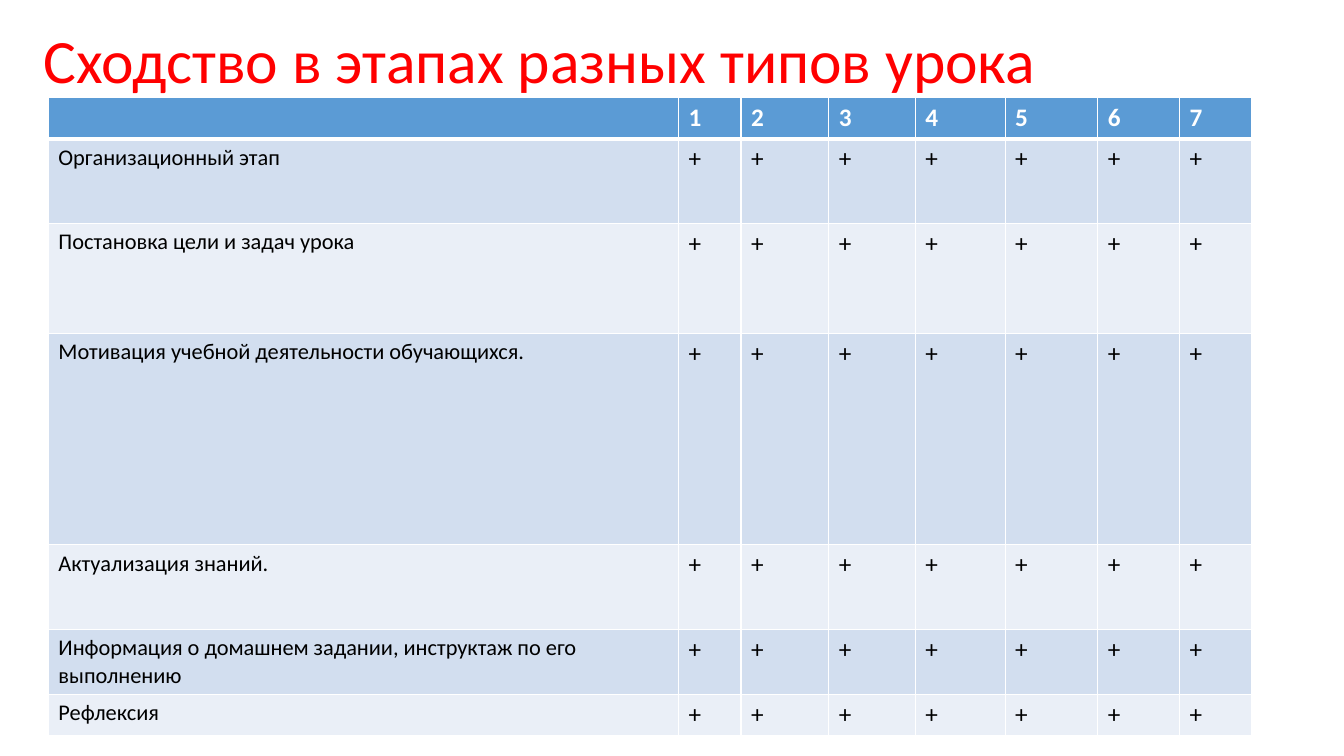
from lxml.etree import SubElement
from pptx import Presentation
from pptx.dml.color import RGBColor
from pptx.enum.text import MSO_ANCHOR, PP_ALIGN
from pptx.oxml.ns import qn
from pptx.util import Inches, Pt

RED = RGBColor(0xFF, 0x00, 0x00)
BLACK = RGBColor(0x00, 0x00, 0x00)
WHITE = RGBColor(0xFF, 0xFF, 0xFF)
HEADER_BLUE = RGBColor(0x5B, 0x9B, 0xD5)
BANDS = (RGBColor(0xD2, 0xDE, 0xEF), RGBColor(0xEA, 0xEF, 0xF7))

LESSON_TYPES = 7
STAGES = [
    "Организационный этап",
    "Постановка цели и задач урока",
    "Мотивация учебной деятельности обучающихся.",
    "Актуализация знаний.",
    "Информация о домашнем задании, инструктаж по его выполнению",
    "Рефлексия",
]
COLUMN_WIDTHS = [6.25, 0.62, 0.87, 0.86, 0.89, 0.92, 0.81, 0.72]
ROW_HEIGHTS = [0.39, 0.84, 1.09, 2.1, 0.84, 0.62, 0.39]


class SlideBuilder:
    """Keeps the text style and the current slide."""

    font = "Calibri"

    def __init__(self, page):
        self.page = page

    def style(self, para, size, color, bold=False):
        for span in para.runs:
            span.font.name = self.font
            span.font.size = Pt(size)
            span.font.bold = bold
            span.font.color.rgb = color

    def title(self, text, left, top, width, height):
        box = self.page.shapes.title
        box.left, box.top = Inches(left), Inches(top)
        box.width, box.height = Inches(width), Inches(height)
        frame = box.text_frame
        frame.text = text
        frame.word_wrap = True
        frame.vertical_anchor = MSO_ANCHOR.MIDDLE
        para = frame.paragraphs[0]
        para.alignment = PP_ALIGN.LEFT
        para.line_spacing = 0.9
        self.style(para, 44, RED)

    def borders(self, cell, bottom):
        properties = cell._tc.get_or_add_tcPr()
        for side, width in (("L", 1), ("R", 1), ("T", 1), ("B", bottom)):
            line = SubElement(properties, qn(f"a:ln{side}"), w=str(Pt(width)))
            fill = SubElement(line, qn("a:solidFill"))
            SubElement(fill, qn("a:srgbClr"), val=str(WHITE))

    def cell(self, cell, text, size, color, fill, bold=False, bottom=1):
        self.borders(cell, bottom)
        cell.fill.solid()
        cell.fill.fore_color.rgb = fill
        cell.text = text
        self.style(cell.text_frame.paragraphs[0], size, color, bold)

    def table(self, left, top, widths, heights, header, rows):
        table = self.page.shapes.add_table(
            len(heights), len(widths), Inches(left), Inches(top),
            Inches(sum(widths)), Inches(sum(heights))).table
        for column, width in zip(table.columns, widths):
            column.width = Inches(width)
        for row, height in zip(table.rows, heights):
            row.height = Inches(height)
        for column, text in enumerate(header):
            self.cell(table.cell(0, column), text, 18, WHITE, HEADER_BLUE,
                      bold=True, bottom=3)
        for row, texts in enumerate(rows, start=1):
            for column, text in enumerate(texts):
                size = 18 if column else 16
                self.cell(table.cell(row, column), text, size, BLACK,
                          BANDS[(row - 1) % 2])


def main():
    deck = Presentation()
    deck.slide_width, deck.slide_height = Inches(13.33), Inches(7.5)
    builder = SlideBuilder(deck.slides.add_slide(deck.slide_layouts[5]))

    # Title
    builder.title("Сходство в этапах разных типов урока", 0.33, 0.18, 12.09, 0.9)

    # Lesson stages against lesson types
    header = [""] + [str(number + 1) for number in range(LESSON_TYPES)]
    rows = [[stage] + ["+"] * LESSON_TYPES for stage in STAGES]
    builder.table(0.48, 0.97, COLUMN_WIDTHS, ROW_HEIGHTS, header, rows)

    deck.save("out.pptx")


if __name__ == "__main__":
    main()
